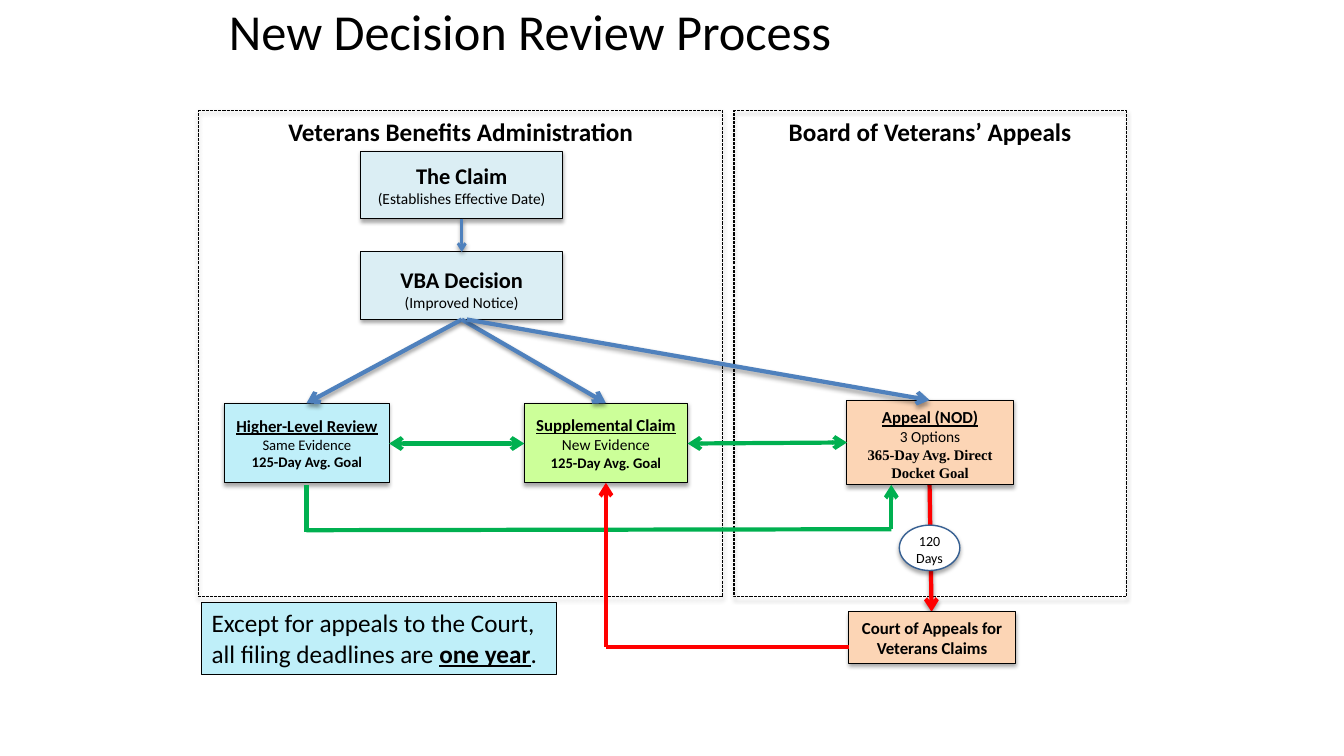
"""Build the slide on the new decision review process."""
import dataclasses
import typing

import lxml.etree
import pptx
import pptx.dml.color
import pptx.enum.dml
import pptx.enum.shapes
import pptx.enum.text
import pptx.oxml.ns
import pptx.util

Inches = pptx.util.Inches
Point = tuple[float, float]
Place = tuple[float, float, float, float]
Form = pptx.enum.shapes.MSO_SHAPE
Align = pptx.enum.text.PP_ALIGN
Anchor = pptx.enum.text.MSO_ANCHOR


@dataclasses.dataclass(frozen=True)
class Theme:
    """Hold colours, fonts and type sizes."""
    black: str = "000000"
    white: str = "FFFFFF"
    mist: str = "DBEEF4"
    sky: str = "BFEFF9"
    lime: str = "CCFF99"
    peach: str = "FCD5B5"
    navy: str = "376092"
    blue: str = "4F81BD"
    green: str = "00B050"
    red: str = "FF0000"
    font: str = "Calibri"
    serif: str = "Times New Roman"
    title: float = 36
    head: float = 18
    step: float = 16
    label: float = 12
    note: float = 11
    goal: float = 10.5
    small: float = 10


THEME = Theme()


@dataclasses.dataclass(frozen=True)
class Run:
    """Describe one run of text."""
    text: str
    size: float
    bold: bool = False
    under: bool = False
    font: str = THEME.font


Lines = tuple[tuple[Run, ...], ...]


@dataclasses.dataclass(frozen=True)
class Box:
    """Describe a filled shape with text."""
    place: Place
    fill: str
    lines: Lines
    form: Form = Form.RECTANGLE
    edge: str = THEME.black
    width: float = 0.75
    side: float = 0.05
    top: float = 0.05
    align: Align = Align.CENTER
    anchor: Anchor = Anchor.MIDDLE
    shade: bool = True


@dataclasses.dataclass(frozen=True)
class Link:
    """Describe a straight line with optional arrows."""
    start: Point
    end: Point
    tint: str
    head: bool = False
    tail: bool = True
    width: float = 3
    shade: bool = False


def rgb(code: str) -> pptx.dml.color.RGBColor:
    """Turn a hex code into a colour."""
    return pptx.dml.color.RGBColor.from_string(code)


def add_node(parent: typing.Any, tag: str, **traits: str) -> typing.Any:
    """Add a drawing element to its parent."""
    return lxml.etree.SubElement(parent, pptx.oxml.ns.qn(tag), traits)


def cast(props: typing.Any, shade: bool, alpha: int = 35) -> None:
    """Replace the theme shadow with a soft one or none."""
    for old in props.findall(pptx.oxml.ns.qn("a:effectLst")):
        props.remove(old)
    effect = add_node(props, "a:effectLst")
    if shade:
        outer = add_node(effect, "a:outerShdw", blurRad="39370", dist="22860",
                         dir="5400000", rotWithShape="0")
        tint = add_node(outer, "a:srgbClr", val=THEME.black)
        add_node(tint, "a:alpha", val=str(alpha * 1000))


def write(frame: typing.Any, lines: Lines, *, align: Align = Align.CENTER,
          anchor: Anchor = Anchor.TOP, side: float = 0.1, top: float = 0.05,
          space: float = 1) -> None:
    """Write lines of runs into a text frame."""
    frame.word_wrap = True
    frame.auto_size = pptx.enum.text.MSO_AUTO_SIZE.NONE
    frame.vertical_anchor = anchor
    frame.margin_left = frame.margin_right = Inches(side)
    frame.margin_top, frame.margin_bottom = Inches(top), Inches(0.05)
    for spot, line in enumerate(lines):
        para = frame.add_paragraph() if spot else frame.paragraphs[0]
        para.alignment, para.line_spacing = align, space
        for item in line:
            run = para.add_run()
            run.text = item.text
            run.font.name, run.font.size = item.font, pptx.util.Pt(item.size)
            run.font.bold, run.font.underline = item.bold, item.under
            run.font.color.rgb = rgb(THEME.black)


def draw_frame(slide: typing.Any, place: Place) -> None:
    """Draw a dashed frame."""
    shape = slide.shapes.add_shape(Form.RECTANGLE, *map(Inches, place))
    shape.fill.background()
    shape.line.color.rgb = rgb(THEME.black)
    shape.line.width = pptx.util.Pt(0.75)
    shape.line.dash_style = pptx.enum.dml.MSO_LINE.SQUARE_DOT
    cast(shape.element.spPr, True)


def draw_head(slide: typing.Any, place: Place, text: str) -> None:
    """Draw the heading of a frame."""
    left, top, width, _ = place
    area = slide.shapes.add_textbox(*map(Inches, (left, top, width, 0.4)))
    write(area.text_frame, ((Run(text, THEME.head, True),),))


def draw_box(slide: typing.Any, box: Box) -> None:
    """Draw a filled box and its text."""
    shape = slide.shapes.add_shape(box.form, *map(Inches, box.place))
    shape.fill.solid()
    shape.fill.fore_color.rgb = rgb(box.fill)
    shape.line.color.rgb = rgb(box.edge)
    shape.line.width = pptx.util.Pt(box.width)
    cast(shape.element.spPr, box.shade)
    write(shape.text_frame, box.lines, align=box.align, anchor=box.anchor,
          side=box.side, top=box.top)


def draw_link(slide: typing.Any, link: Link) -> None:
    """Draw a line and its arrows."""
    wire = slide.shapes.add_connector(
        pptx.enum.shapes.MSO_CONNECTOR.STRAIGHT,
        *map(Inches, link.start + link.end))
    wire.line.color.rgb = rgb(link.tint)
    wire.line.width = pptx.util.Pt(link.width)
    props = wire.element.spPr
    stroke = props.find(pptx.oxml.ns.qn("a:ln"))
    for tag, shown in (("a:headEnd", link.head), ("a:tailEnd", link.tail)):
        if shown:
            add_node(stroke, tag, type="arrow")
    cast(props, link.shade, 38)


def step(name: str, note: str) -> Lines:
    """Give the text of an early step."""
    return (Run(name, THEME.step, True),), (Run(note, THEME.note),)


def lane(name: str, note: str, goal: str, size: float = THEME.note,
         font: str = THEME.font) -> Lines:
    """Give the text of a review lane."""
    return ((Run(name, THEME.label, True, True),), (Run(note, size),),
            (Run(goal, THEME.goal, True, font=font),))


FRAMES = {"Veterans Benefits Administration": (1.97, 1.1, 5.2, 4.82),
          "Board of Veterans’ Appeals": (7.28, 1.1, 3.89, 4.82)}
COURT_PATH = Link((9.22, 4.81), (9.24, 6.07), THEME.red, shade=True)
BOXES = (
    Box((8.4, 3.97, 1.65, 0.84), THEME.peach,
        lane("Appeal (NOD)", "3 Options", "365-Day Avg. Direct Docket Goal",
             font=THEME.serif), side=0.1, top=0.08),
    Box((5.2, 4, 1.62, 0.79), THEME.lime,
        lane("Supplemental Claim", "New Evidence", "125-Day Avg. Goal")),
    Box((2.23, 4, 1.63, 0.79), THEME.sky,
        lane("Higher-Level Review", "Same Evidence", "125-Day Avg. Goal",
             THEME.goal)),
    Box((3.58, 2.5, 2, 0.67), THEME.mist,
        step("VBA Decision", "(Improved Notice)"), top=0.11),
    Box((3.58, 1.5, 2, 0.67), THEME.mist,
        step("The Claim", "(Establishes Effective Date)")),
    Box((8.92, 5.21, 0.6, 0.45), THEME.white,
        ((Run("120 Days", THEME.small),),), Form.OVAL, THEME.navy, 1, 0, 0.08),
    Box((8.42, 6.07, 1.65, 0.51), THEME.peach,
        ((Run("Court of Appeals for Veterans Claims", THEME.label, True),),)),
    Box((2, 5.98, 3.52, 0.71), THEME.sky,
        ((Run("Except for appeals to the Court,", THEME.head),),
         (Run("all filing deadlines are ", THEME.head),
          Run("one year", THEME.head, True, True), Run(".", THEME.head))),
        side=0.1, align=Align.LEFT, anchor=Anchor.TOP, shade=False),
)
LINKS = (
    Link((4.58, 2.17), (4.58, 2.5), THEME.blue, width=2, shade=True),
    Link((4.58, 3.17), (3.04, 4), THEME.blue, shade=True),
    Link((4.58, 3.17), (6.01, 4), THEME.blue, shade=True),
    Link((4.63, 3.17), (9.22, 3.97), THEME.blue, shade=True),
    Link((3.86, 4.4), (5.2, 4.4), THEME.green, head=True),
    Link((6.82, 4.4), (8.4, 4.39), THEME.green, head=True),
    Link((3.04, 5.28), (3.04, 4.81), THEME.green, tail=False),
    Link((8.84, 5.25), (8.84, 4.81), THEME.green),
    Link((3.04, 5.26), (8.84, 5.25), THEME.green, tail=False),
    Link((6.01, 6.42), (8.42, 6.42), THEME.red, tail=False),
    Link((6.01, 6.42), (6.01, 4.79), THEME.red),
)


def main() -> None:
    """Build and save the deck."""
    deck = pptx.Presentation()
    deck.slide_width, deck.slide_height = Inches(13.33), Inches(7.5)
    slide = deck.slides.add_slide(deck.slide_layouts[5])
    title = slide.shapes.title
    title.left, title.top, title.width, title.height = map(
        Inches, (2.17, -0.08, 9, 0.83))
    write(title.text_frame, ((Run("New Decision Review Process", THEME.title),),),
          align=Align.LEFT, anchor=Anchor.MIDDLE, space=0.9)
    for text, place in FRAMES.items():
        draw_frame(slide, place)
        draw_head(slide, place, text)
    draw_link(slide, COURT_PATH)
    for box in BOXES:
        draw_box(slide, box)
    for link in LINKS:
        draw_link(slide, link)
    deck.save("out.pptx")


if __name__ == "__main__":
    main()
